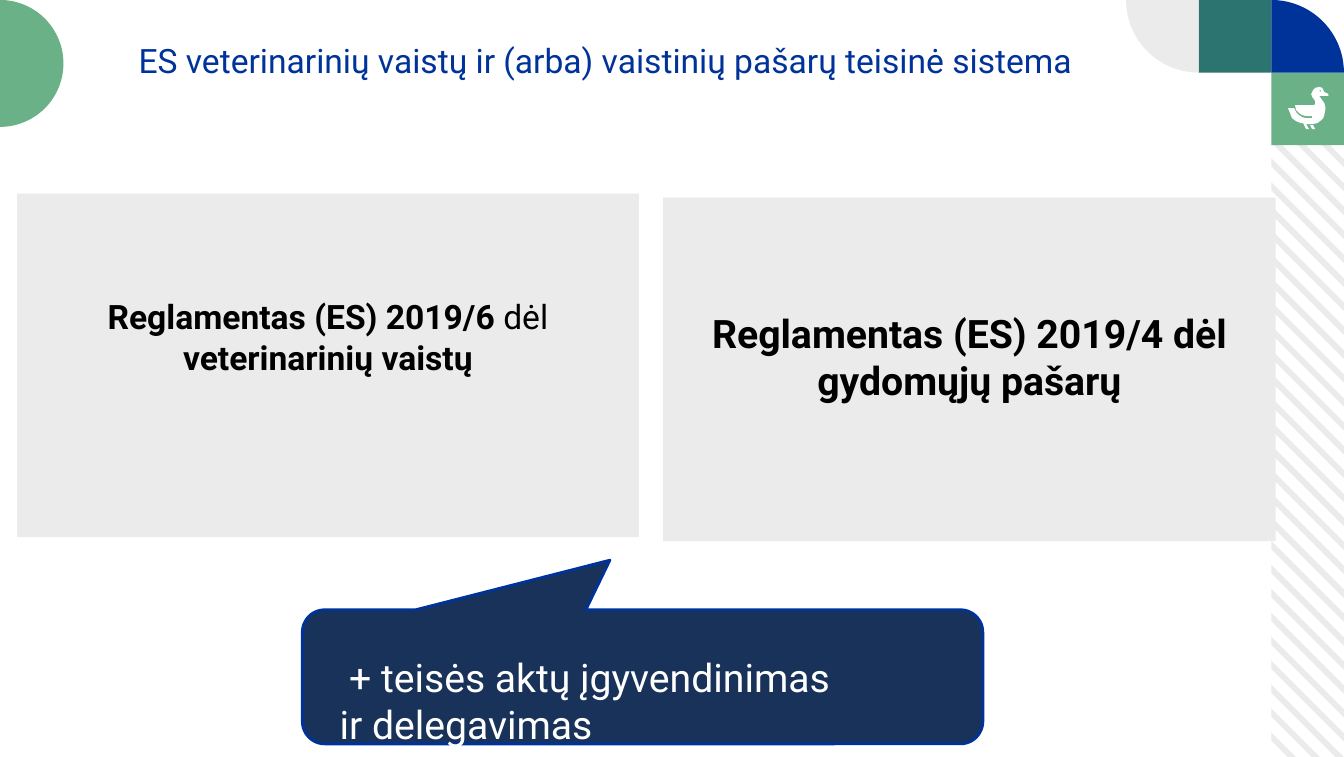
from dataclasses import dataclass
from math import cos, radians, sin

from pptx import Presentation
from pptx.dml.color import RGBColor
from pptx.enum.shapes import MSO_SHAPE as Preset
from pptx.enum.text import MSO_ANCHOR as Anchor, PP_ALIGN as Align
from pptx.util import Cm, Pt


@dataclass(frozen=True)
class Theme:
    font: str = "Roboto"
    blue: str = "003399"
    navy: str = "18325A"
    teal: str = "2C7470"
    green: str = "6BB188"
    grey: str = "ECEBEB"
    white: str = "FFFFFF"
    black: str = "000000"
    body_size: int = 24
    large_size: int = 28
    outline: int = 2


THEME = Theme()
PAGE_WIDTH, PAGE_HEIGHT = 33.87, 19.08
TILE = 1.83

# Goose outlines in hundredths of an inch from the icon's corner
GOOSE = [
    [(27, 42), (25, 38), (22, 38), (24, 42)],
    [(40, 7), (36, 5), (34, 1), (31, 0), (27, 1), (25, 3), (24, 5), (23, 7),
     (24, 10), (27, 14), (27, 17), (26, 18), (7, 18), (8, 23), (11, 26),
     (14, 28), (18, 29), (24, 29), (24, 31), (18, 31), (14, 30), (11, 28),
     (8, 25), (6, 21), (0, 21), (2, 26), (4, 31), (8, 34), (13, 36),
     (15, 36), (18, 42), (21, 42), (18, 37), (24, 37), (29, 36), (33, 33),
     (35, 31), (36, 28), (37, 23), (37, 20), (36, 16), (31, 9), (40, 9)],
    [(33, 4), (32, 5), (31, 4), (32, 3)],
]


def paint(shape, fill, line=None):
    shape.shadow.inherit = False
    shape.fill.solid()
    shape.fill.fore_color.rgb = RGBColor.from_string(fill)
    if line:
        shape.line.color.rgb = RGBColor.from_string(line)
        shape.line.width = Pt(THEME.outline)
    else:
        shape.line.fill.background()


def add_preset(page, preset, box, fill, line=None):
    shape = page.shapes.add_shape(preset, *map(Cm, box))
    paint(shape, fill, line)
    return shape


def add_outline(page, contours, fill):
    """Draw closed contours, given in centimetres, as one shape."""
    contours = [[(Cm(x), Cm(y)) for x, y in points] for points in contours]
    builder = page.shapes.build_freeform(*contours[0][0], scale=1.0)
    for number, points in enumerate(contours):
        if number:
            builder.move_to(*points[0])
        builder.add_line_segments(points[1:], close=True)
    paint(builder.convert_to_shape(), fill)


def add_sector(page, centre, radius, start, end, fill):
    x, y = centre
    arc = [(x + radius * cos(radians(angle)), y + radius * sin(radians(angle)))
           for angle in range(start, end + 1, 3)]
    add_outline(page, [[centre] + arc], fill)


def style_para(para, size, colour, align=Align.LEFT, bold=False):
    para.alignment = align
    para.font.name = THEME.font
    para.font.size = Pt(size)
    para.font.bold = bold
    para.font.color.rgb = RGBColor.from_string(colour)


def add_text_box(page, box, anchor):
    frame = page.shapes.add_textbox(*map(Cm, box)).text_frame
    frame.word_wrap = True
    frame.vertical_anchor = anchor
    return frame


# Striped band on the right edge
def add_stripes(page, box):
    left, top, width, height = box
    first, pitch, thickness, count = top - 1.48, 0.603, 0.21, 28
    stripes = []
    for number in range(count):
        upper = first + number * pitch
        lower = upper + thickness
        edges = [[(left + run, edge + run)
                  for run in (max(0, top - edge),
                              min(width, top + height - edge))]
                 for edge in (upper, lower)]
        stripes.append(edges[0] + edges[1][::-1])
    add_outline(page, stripes, THEME.grey)


# Corner tiles with the goose, and the half disc on the left
def add_decor(page, right):
    tile_left = right - TILE
    add_preset(page, Preset.RECTANGLE, (tile_left - TILE, 0, TILE, TILE),
               THEME.teal)
    add_preset(page, Preset.RECTANGLE, (tile_left, TILE, TILE, TILE),
               THEME.green)
    add_sector(page, (tile_left, TILE), TILE, 270, 360, THEME.blue)
    add_sector(page, (tile_left - TILE, 0), TILE, 90, 180, THEME.grey)
    goose = [[(tile_left + 0.42 + x * 0.0254, TILE + 0.36 + y * 0.0254)
              for x, y in points] for points in GOOSE]
    add_outline(page, goose, THEME.white)
    add_sector(page, (0, 1.6), 1.6, -90, 90, THEME.green)


def add_title(page, box, text):
    para = add_text_box(page, box, Anchor.MIDDLE).paragraphs[0]
    para.text = text
    style_para(para, THEME.body_size, THEME.blue, Align.CENTER)


# Regulation card: spans are (text, bold) pairs
def add_card(page, box, spans, size, lift):
    frame = add_preset(page, Preset.RECTANGLE, box, THEME.grey).text_frame
    frame.word_wrap = True
    frame.vertical_anchor = Anchor.MIDDLE
    frame.margin_bottom = Cm(0.13 + lift)
    para = frame.paragraphs[0]
    style_para(para, size, THEME.black, Align.CENTER, bold=True)
    for text, bold in spans:
        span = para.add_run()
        span.text = text
        if not bold:
            span.font.bold = False


def add_callout(page, box, text):
    left, top, width, height = box
    callout = add_preset(page, Preset.ROUNDED_RECTANGULAR_CALLOUT, box,
                         THEME.navy, THEME.blue)
    for number, value in enumerate((-0.048, -0.87, 0.167)):
        callout.adjustments[number] = value
    label = (left + 0.69, top + 0.97, width - 1.6, 2.64)
    para = add_text_box(page, label, Anchor.TOP).paragraphs[0]
    para.text = text
    para._p.get_or_add_pPr().set("indent", str(Cm(0.24)))
    style_para(para, THEME.large_size, THEME.white)


def main():
    deck = Presentation()
    deck.slide_width, deck.slide_height = Cm(PAGE_WIDTH), Cm(PAGE_HEIGHT)
    page = deck.slides.add_slide(deck.slide_layouts[6])
    add_stripes(page, (PAGE_WIDTH - TILE, 2 * TILE, TILE,
                       PAGE_HEIGHT - 2 * TILE))
    add_decor(page, PAGE_WIDTH)
    add_title(page, (2.11, 0.86, 26.29, 1.32),
              "ES veterinarinių vaistų ir (arba) vaistinių pašarų "
              "teisinė sistema")
    add_card(page, (0.43, 4.88, 15.67, 8.66),
             [("Reglamentas (ES) 2019/6 ", True), ("dėl", False),
              (" veterinarinių vaistų", True)], THEME.body_size, 1.45)
    add_card(page, (16.71, 4.98, 15.44, 8.66),
             [("Reglamentas (ES) 2019/4 dėl gydomųjų pašarų", True)],
             THEME.large_size, 0.65)
    add_callout(page, (7.62, 15.37, 17.15, 3.38),
                "+ teisės aktų įgyvendinimas\vir delegavimas")
    deck.save("out.pptx")


if __name__ == "__main__":
    main()
